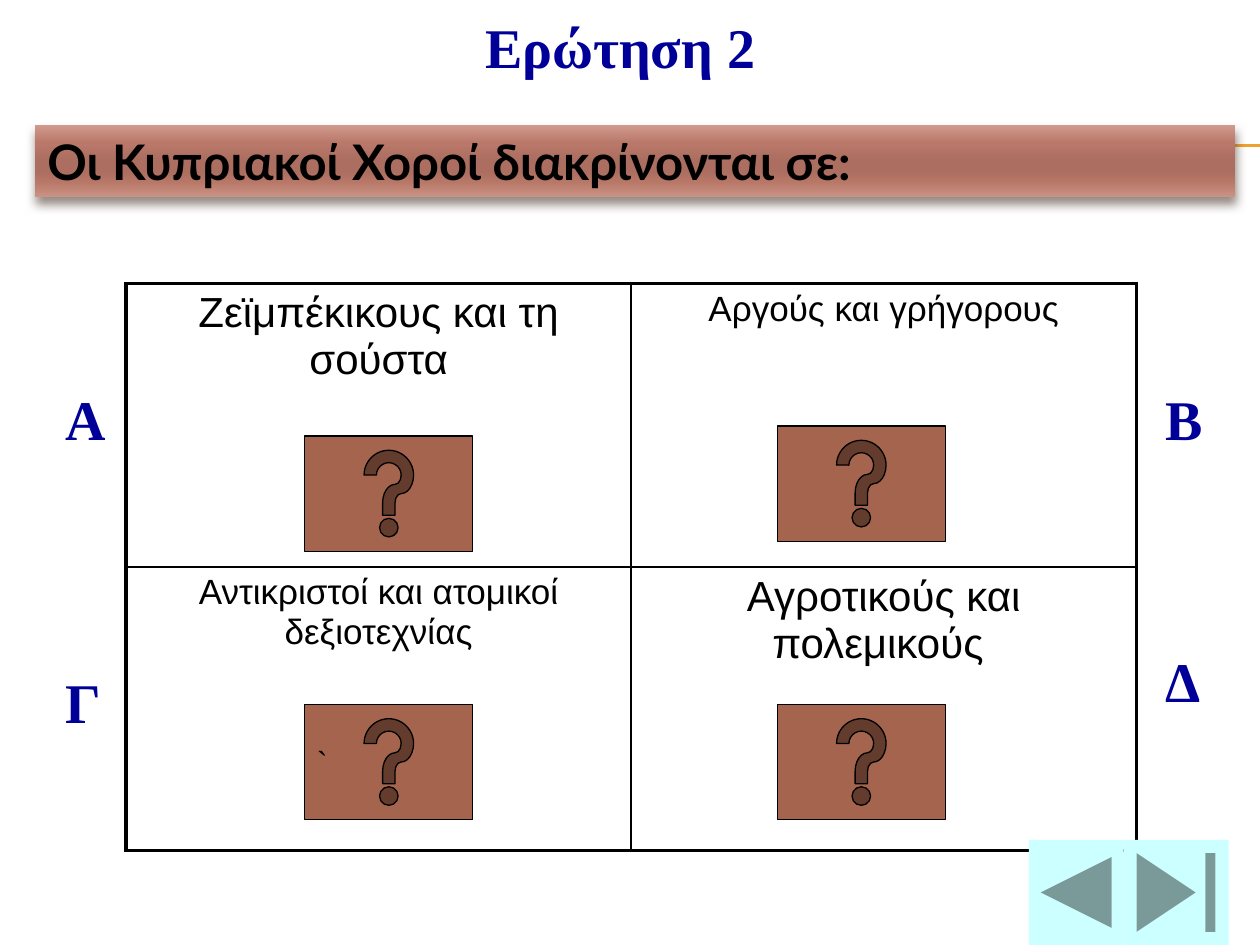
"""Build a quiz slide with one question and four framed answers."""
import pptx
import pptx.util
import pptx.dml.color
import pptx.enum.shapes
import pptx.enum.text
import pptx.oxml
import pptx.oxml.ns

Pt = pptx.util.Pt
RGB = pptx.dml.color.RGBColor
SHAPE = pptx.enum.shapes.MSO_SHAPE
ALIGN = pptx.enum.text.PP_ALIGN
ANCHOR = pptx.enum.text.MSO_ANCHOR
NS = 'xmlns:a="http://schemas.openxmlformats.org/drawingml/2006/main"'

BLACK = RGB(0x00, 0x00, 0x00)
WHITE = RGB(0xFF, 0xFF, 0xFF)
NAVY = RGB(0x00, 0x00, 0x99)
BROWN = RGB(0xA5, 0x64, 0x4E)
CYAN = RGB(0xCC, 0xFF, 0xFF)
GOLD = RGB(0xF0, 0xA2, 0x2E)

TITLE = "Ερώτηση 2"
QUERY = "Οι Κυπριακοί Χοροί διακρίνονται σε:"
ANSWERS = [
    [("Ζεϊμπέκικους και τη σούστα", 24), ("Αργούς και γρήγορους", 20)],
    [("Αντικριστοί και ατομικοί δεξιοτεχνίας", 20), ("Αγροτικούς και πολεμικούς ", 24)],
]
MARKS = [("Α", 30.2, 216), ("Γ", 30.2, 378), ("Β", 658.8, 216), ("Δ", 658.8, 365.8)]
HELPS = [("`", 174.2, 402.5), ("", 444.2, 402.5), ("", 444.2, 243.4), ("", 174.2, 249.1)]
MOVES = [(SHAPE.ACTION_BUTTON_END, 642, 60), (SHAPE.ACTION_BUTTON_BACK_OR_PREVIOUS, 588, 54)]
STOPS = [(0, "D09A8D"), (25, "B97869"), (50, "AB6E60"),
         (65, "AB6E60"), (80, "B87868"), (100, "CA9386")]
RULES = [82.8, 83.5]
THICK, THIN = 2.25, 1


def write(frame, text, size, font, color, bold=False, align=ALIGN.LEFT):
    frame.text = text
    para = frame.paragraphs[0]
    para.alignment = align
    for run in para.runs:
        run.font.size, run.font.name, run.font.bold = Pt(size), font, bold
        run.font.color.rgb = color


def label(shape, text):
    frame = shape.text_frame
    frame.word_wrap = True
    frame.auto_size = pptx.enum.text.MSO_AUTO_SIZE.NONE
    frame.vertical_anchor = ANCHOR.TOP
    write(frame, text, 32, "Times New Roman", NAVY, True)


def block(slide, kind, box, color):
    shape = slide.shapes.add_shape(kind, *map(Pt, box))
    shape.shadow.inherit = False
    shape.fill.solid()
    shape.fill.fore_color.rgb = color
    shape.line.fill.background()
    return shape


def edge(cell, sides):
    props = cell._tc.get_or_add_tcPr()
    for spot, (side, width) in enumerate(sides):
        props.insert(spot, pptx.oxml.parse_xml(
            f'<a:ln{side} {NS} w="{Pt(width)}"><a:solidFill>'
            f'<a:srgbClr val="{BLACK}"/></a:solidFill></a:ln{side}>'))


def add_rules(slide):
    for top in RULES:
        line = slide.shapes.add_connector(
            pptx.enum.shapes.MSO_CONNECTOR.STRAIGHT, Pt(40), Pt(top), Pt(720), Pt(top))
        line.line.color.rgb = GOLD
        line.line.width = Pt(0.75)
        line._element.spPr.append(pptx.oxml.parse_xml(f"<a:effectLst {NS}/>"))


def add_grid(slide):
    table = slide.shapes.add_table(2, 2, Pt(72), Pt(162), Pt(577.4), Pt(324)).table
    table.first_row = table.horz_banding = False
    for r, row in enumerate(ANSWERS):
        table.rows[r].height = Pt(162)
        for c, (text, size) in enumerate(row):
            cell = table.cell(r, c)
            write(cell.text_frame, text, size, "Arial", BLACK, align=ALIGN.CENTER)
            cell.fill.solid()
            cell.fill.fore_color.rgb = WHITE
            edge(cell, [("L", THIN if c else THICK), ("R", THICK if c else THIN),
                        ("T", THIN if r else THICK), ("B", THICK if r else THIN)])


def add_keys(slide):
    for text, left, top in HELPS:
        key = block(slide, SHAPE.ACTION_BUTTON_HELP, (left, top, 96, 66), BROWN)
        key.line.color.rgb = BLACK
        key.line.width = Pt(0.75)
        if text:
            key.text_frame.word_wrap = False
            key.text_frame.vertical_anchor = ANCHOR.MIDDLE
            write(key.text_frame, text, 18, "Arial", BLACK)
    for kind, left, width in MOVES:
        block(slide, kind, (left, 480, width, 60), CYAN)


def add_bar(slide):
    bar = block(slide, SHAPE.RECTANGLE, (20, 71.5, 686, 41), BROWN)
    props = bar._element.spPr
    stops = "".join(f'<a:gs pos="{pos * 1000}"><a:srgbClr val="{hue}"/></a:gs>'
                    for pos, hue in STOPS)
    props.replace(props.find(pptx.oxml.ns.qn("a:solidFill")), pptx.oxml.parse_xml(
        f'<a:gradFill {NS}><a:gsLst>{stops}</a:gsLst><a:lin ang="5400000"/></a:gradFill>'))
    props.find(pptx.oxml.ns.qn("a:effectLst")).append(pptx.oxml.parse_xml(
        f'<a:outerShdw {NS} blurRad="{Pt(6)}" dist="{Pt(4)}" dir="5400000" rotWithShape="0">'
        '<a:srgbClr val="4E3B30"><a:alpha val="60000"/></a:srgbClr></a:outerShdw>'))
    bar.text_frame.word_wrap = True
    bar.text_frame.vertical_anchor = ANCHOR.TOP
    write(bar.text_frame, QUERY, 28, "Lato", BLACK, True)


def main():
    deck = pptx.Presentation()
    deck.slide_width, deck.slide_height = Pt(720), Pt(540)
    slide = deck.slides.add_slide(deck.slide_layouts[5])
    title = slide.shapes.title
    title.left, title.top, title.width, title.height = map(Pt, (270, 3.6, 192, 45.4))
    label(title, TITLE)
    add_rules(slide)
    add_grid(slide)
    for text, left, top in MARKS:
        label(slide.shapes.add_textbox(Pt(left), Pt(top), Pt(36), Pt(45.4)), text)
    add_keys(slide)
    add_bar(slide)
    deck.save("out.pptx")


if __name__ == "__main__":
    main()
